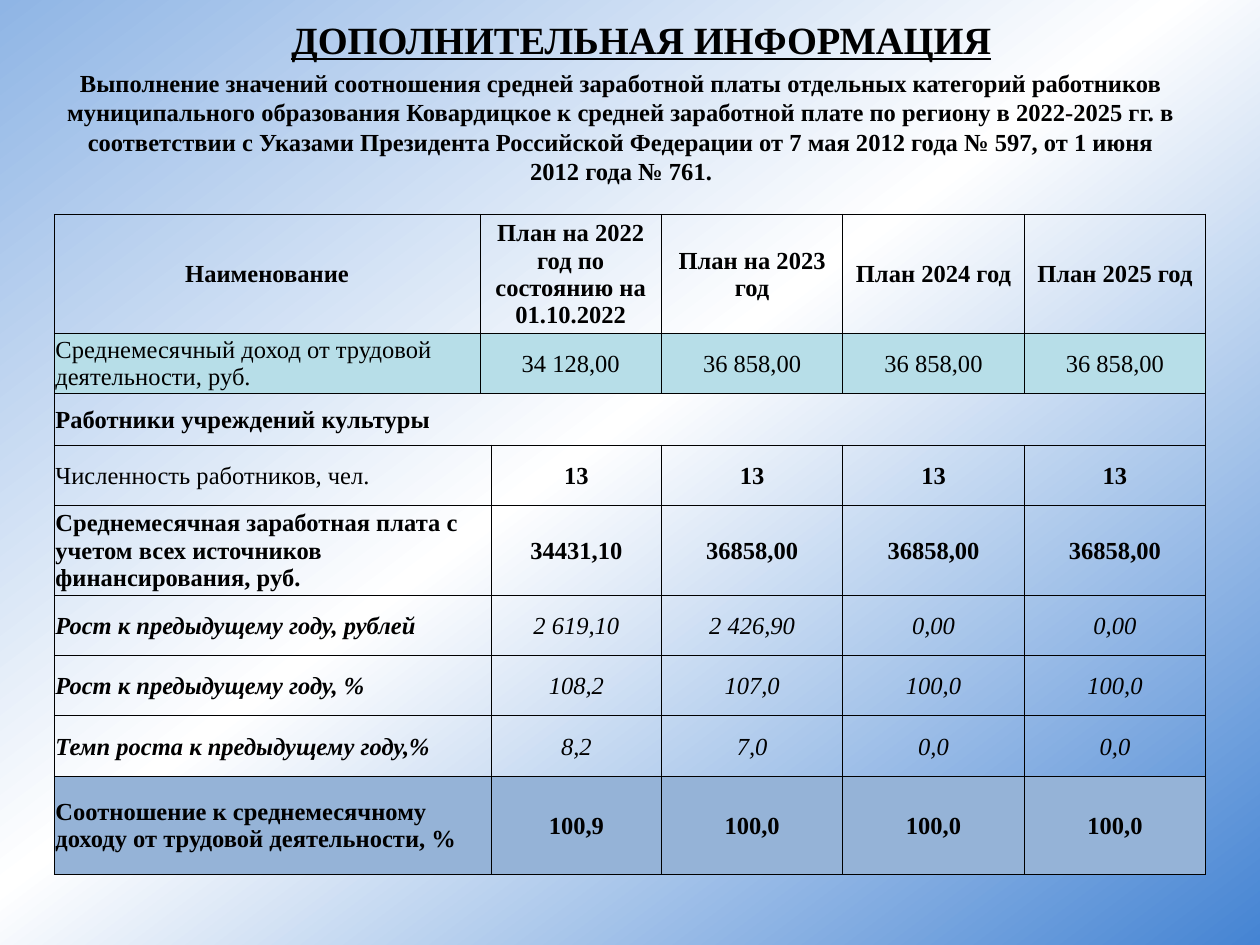
import copy

import pptx
import pptx.dml.color
import pptx.enum.text
import pptx.oxml
import pptx.oxml.ns
import pptx.util

Inches = pptx.util.Inches
ALIGN = pptx.enum.text.PP_ALIGN
MIDDLE = pptx.enum.text.MSO_ANCHOR.MIDDLE

TITLE = "ДОПОЛНИТЕЛЬНАЯ ИНФОРМАЦИЯ"
SUBTITLE = (
    "Выполнение значений соотношения средней заработной платы отдельных категорий "
    "работников муниципального образования Ковардицкое к средней заработной плате "
    "по региону в 2022-2025 гг. в соответствии с Указами Президента Российской "
    "Федерации от 7 мая 2012 года № 597, от 1 июня 2012 года № 761."
)
COLUMN_WIDTHS = [3.38, 0.09, 1.35, 1.44, 1.44, 1.44]

# Each row: height, columns under the label, label style, value style, fill, texts
ROWS = [
    (0.94, 1, "b", "b", None, ["Наименование", "План на 2022 год по состоянию на 01.10.2022",
                               "План на 2023 год", "План 2024 год", "План 2025 год"]),
    (0.47, 1, "", "", "B7DEE8", ["Среднемесячный доход от трудовой деятельности, руб.",
                                 "34 128,00", "36 858,00", "36 858,00", "36 858,00"]),
    (0.41, 6, "b", "", None, ["Работники учреждений культуры"]),
    (0.48, 2, "", "b", None, ["Численность работников, чел.", "13", "13", "13", "13"]),
    (0.71, 2, "b", "b", None, ["Среднемесячная заработная плата с учетом всех источников "
                               "финансирования, руб.",
                               "34431,10", "36858,00", "36858,00", "36858,00"]),
    (0.48, 2, "bi", "i", None, ["Рост к предыдущему году, рублей",
                                "2 619,10", "2 426,90", "0,00", "0,00"]),
    (0.48, 2, "bi", "i", None, ["Рост к предыдущему году, %",
                                "108,2", "107,0", "100,0", "100,0"]),
    (0.48, 2, "bi", "i", None, ["Темп роста к предыдущему году,%",
                                "8,2", "7,0", "0,0", "0,0"]),
    (0.78, 2, "b", "b", "95B3D7", ["Соотношение к среднемесячному доходу от трудовой "
                                   "деятельности, %",
                                   "100,9", "100,0", "100,0", "100,0"]),
]


def color(value):
    """Return the colour for a hex string."""
    return pptx.dml.color.RGBColor.from_string(value)


def write(text_frame, text, size=14, style="b", align=ALIGN.CENTER):
    """Put one formatted paragraph into a text frame."""
    text_frame.word_wrap = True
    paragraph = text_frame.paragraphs[0]
    paragraph.text = text
    paragraph.alignment = align
    font = paragraph.font
    font.name = "Times New Roman"
    font.size = pptx.util.Pt(size)
    font.bold = "b" in style
    font.italic = "i" in style
    font.underline = "u" in style
    font.color.rgb = color("000000")


def paint_background(slide):
    """Fill the slide with a diagonal blue and white gradient."""
    fill = slide.background.fill
    fill.gradient()
    fill.gradient_angle = 307
    stop_list = slide.element.find(".//" + pptx.oxml.ns.qn("a:gsLst"))
    stop_list.insert(1, copy.deepcopy(stop_list[0]))
    stops = [(0, "8FB5E5"), (0.47, "FFFFFF"), (1, "4584D3")]
    for stop, (position, value) in zip(fill.gradient_stops, stops):
        stop.position = position
        stop.color.rgb = color(value)


def add_heading(slide, left, top, width):
    """Place the title and the explanatory text below it."""
    title = slide.shapes.title
    title.left, title.top = Inches(left + 0.16), Inches(top)
    title.width, title.height = Inches(width), Inches(0.36)
    title.text_frame.vertical_anchor = MIDDLE
    write(title.text_frame, TITLE, 22, "bu")
    subtitle = slide.shapes.add_textbox(
        Inches(left), Inches(top + 0.36), Inches(width), Inches(1.04))
    write(subtitle.text_frame, SUBTITLE)


def add_borders(cell):
    """Draw thin black lines on all four sides of a cell."""
    properties = cell._tc.get_or_add_tcPr()
    for index, side in enumerate("LRTB"):
        properties.insert(index, pptx.oxml.parse_xml(
            f'<a:ln{side} {pptx.oxml.ns.nsdecls("a")} w="6350"><a:solidFill>'
            f'<a:srgbClr val="000000"/></a:solidFill></a:ln{side}>'))


def format_cell(cell, text, style, align, fill):
    """Write a cell and set its margins, fill and borders."""
    cell.margin_left = cell.margin_right = cell.margin_top = Inches(0.01)
    cell.margin_bottom = 0
    cell.vertical_anchor = MIDDLE
    write(cell.text_frame, text, style=style, align=align)
    if fill:
        cell.fill.solid()
        cell.fill.fore_color.rgb = color(fill)
    else:
        cell.fill.background()
    add_borders(cell)


def add_wage_table(slide, left, top):
    """Place the wage table, merging cells where a row needs it."""
    column_count = len(COLUMN_WIDTHS)
    table = slide.shapes.add_table(
        len(ROWS), column_count, Inches(left), Inches(top),
        Inches(sum(COLUMN_WIDTHS)), Inches(sum(row[0] for row in ROWS))).table
    table.first_row = table.horz_banding = False
    for column, width in zip(table.columns, COLUMN_WIDTHS):
        column.width = Inches(width)
    for row, (height, span, label_style, value_style, fill, texts) in enumerate(ROWS):
        table.rows[row].height = Inches(height)
        for column in range(column_count):
            table.cell(row, column).fill.background()
        starts = [0, span, 3, 4, 5][:len(texts)]
        for start, end, text in zip(starts, starts[1:] + [column_count], texts):
            cell = table.cell(row, start)
            if end - start > 1:
                cell.merge(table.cell(row, end - 1))
            is_label = start == 0
            align = ALIGN.LEFT if is_label and row else ALIGN.CENTER
            format_cell(cell, text, label_style if is_label else value_style, align, fill)


def main():
    """Build and save the presentation."""
    presentation = pptx.Presentation()
    presentation.slide_width, presentation.slide_height = Inches(10), Inches(7.5)
    slide = presentation.slides.add_slide(presentation.slide_layouts[5])
    paint_background(slide)
    add_heading(slide, 0.43, 0.13, 9)
    add_wage_table(slide, 0.43, 1.7)
    presentation.save("out.pptx")


if __name__ == "__main__":
    main()
